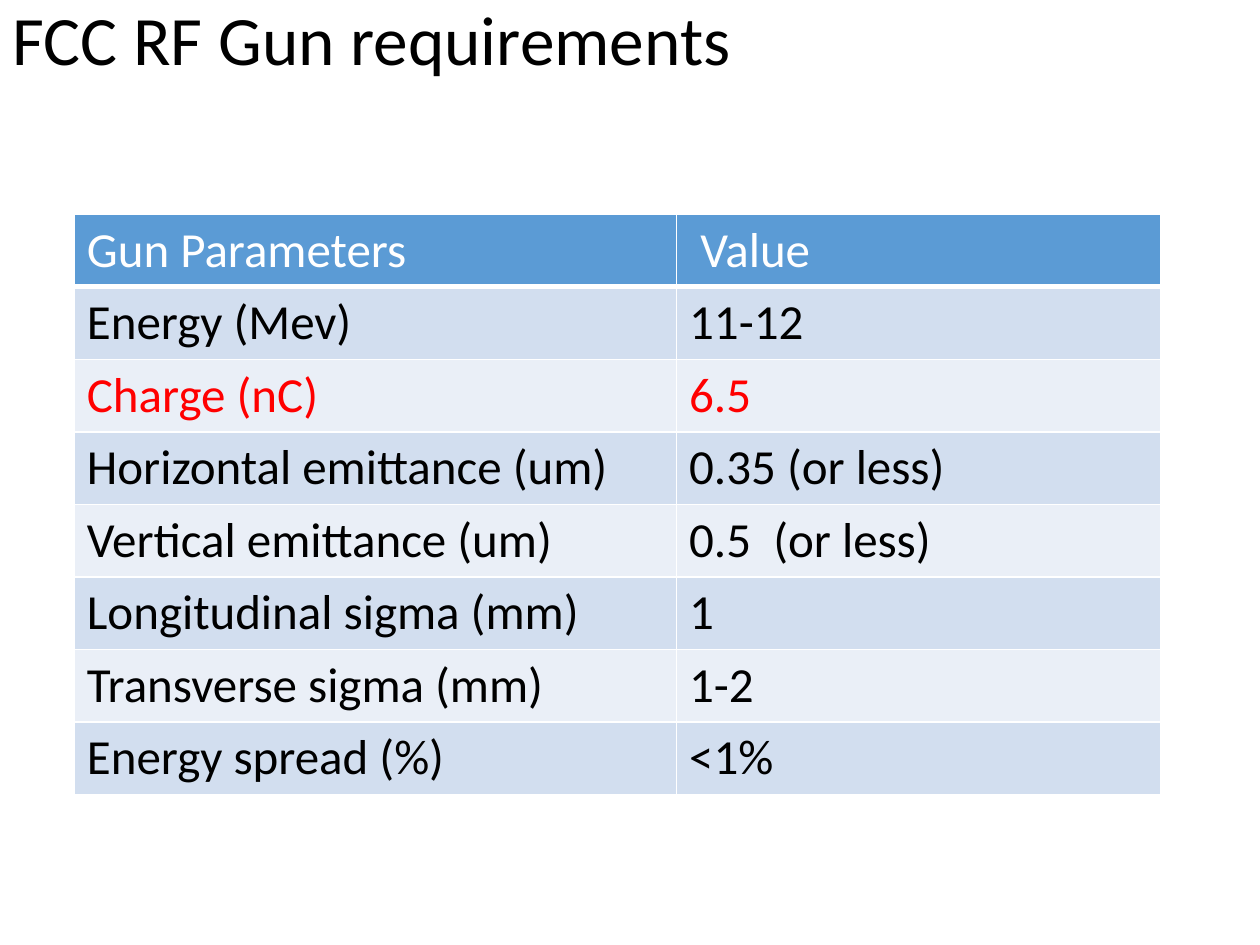
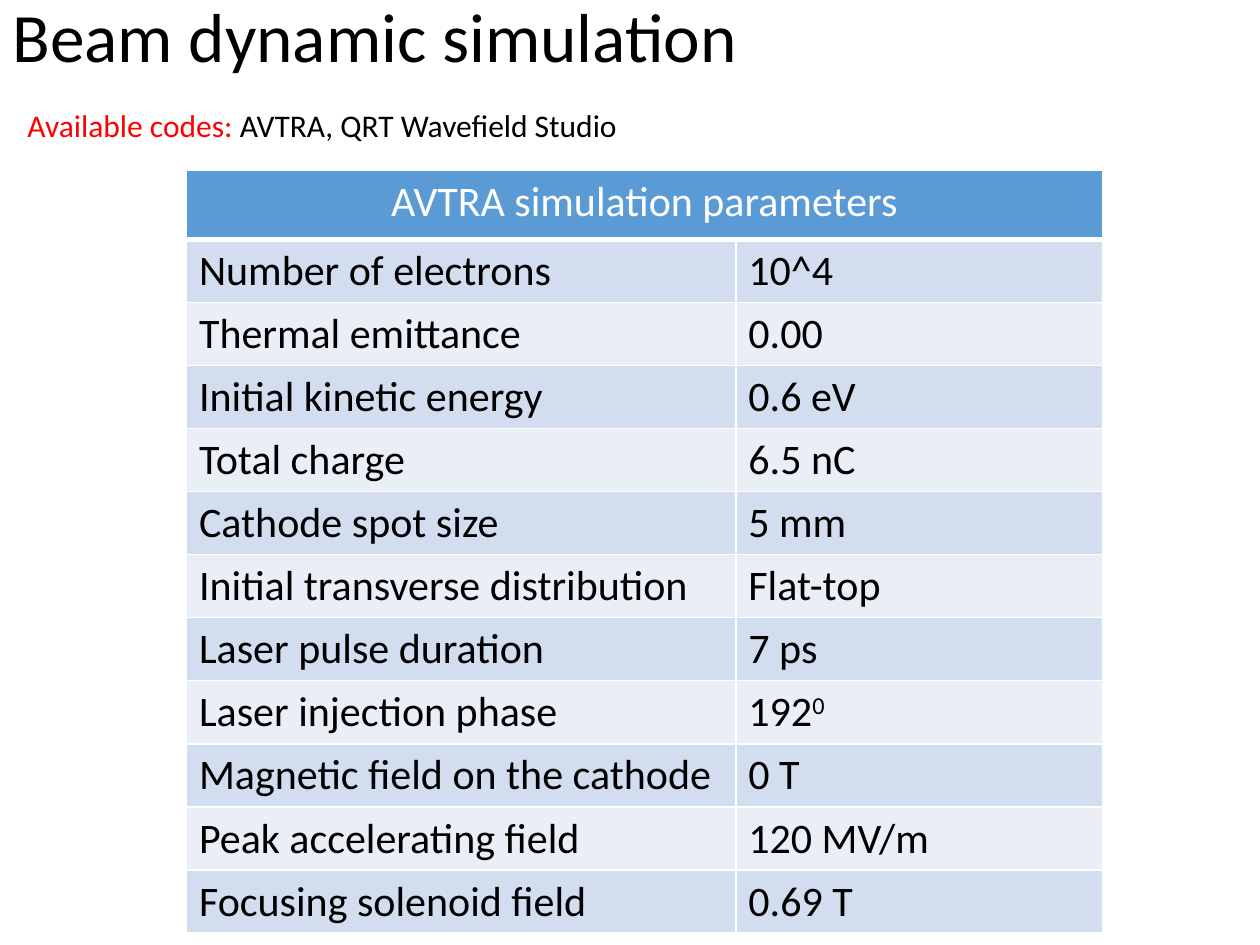
from lxml.etree import SubElement as Sub
from pptx import Presentation
from pptx.dml.color import RGBColor
from pptx.enum.text import MSO_ANCHOR as Anchor, MSO_AUTO_SIZE as Fit, PP_ALIGN as Align
from pptx.oxml.ns import qn
from pptx.util import Inches, Pt

FONT = "Calibri"
BLACK, WHITE, RED = "000000", "FFFFFF", "FF0000"
HEAD, BANDS = "5B9BD5", ("D2DEEF", "EAEFF7")

GUN = [
    ("Gun Parameters", " Value"),
    ("Energy (Mev)", "11-12"),
    ("Charge (nC)", "6.5"),
    ("Horizontal emittance (um)", "0.35 (or less)"),
    ("Vertical emittance (um)", "0.5  (or less)"),
    ("Longitudinal sigma (mm)", "1"),
    ("Transverse sigma (mm)", "1-2"),
    ("Energy spread (%)", "<1%"),
]
BEAM = [
    ("AVTRA simulation parameters",),
    ("Number of electrons", "10^4"),
    ("Thermal emittance", "0.00"),
    ("Initial kinetic energy", "0.6 eV"),
    ("Total charge", "6.5 nC"),
    ("Cathode spot size", "5 mm"),
    ("Initial transverse distribution", "Flat-top"),
    ("Laser pulse duration", "7 ps"),
    ("Laser injection phase", "192^{0}"),
    ("Magnetic field on the cathode", "0 T"),
    ("Peak accelerating field", "120 MV/m"),
    ("Focusing solenoid field", "0.69 T"),
]


def paint(target, color):
    target.solid()
    target.fore_color.rgb = RGBColor.from_string(color)


def write(para, text, size, color, raised=False):
    run = para.add_run()
    run.text = text
    for name, value in {"name": FONT, "size": Pt(size), "bold": False}.items():
        setattr(run.font, name, value)
    paint(run.font.fill, color)
    if raised:
        run._r.get_or_add_rPr().set("baseline", "30000")


def edge(cell, foot):
    props = cell._tc.get_or_add_tcPr()
    for side, width in {"L": 1, "R": 1, "T": 1, "B": foot}.items():
        line = Sub(props, qn(f"a:ln{side}"), w=str(Pt(width)))
        Sub(Sub(line, qn("a:solidFill")), qn("a:srgbClr"), val=WHITE)


def add_title(slide, text, top):
    title = slide.shapes.title
    spot = {"left": 0, "top": top, "width": 8.62, "height": 0.59}
    for name, value in spot.items():
        setattr(title, name, Inches(value))
    frame = title.text_frame
    look = {"vertical_anchor": Anchor.MIDDLE, "auto_size": Fit.NONE, "word_wrap": True}
    for name, value in look.items():
        setattr(frame, name, value)
    para = frame.paragraphs[0]
    para.alignment, para.line_spacing = Align.LEFT, 0.9
    write(para, text, 39.6, BLACK)


def add_codes(slide, box):
    frame = slide.shapes.add_textbox(*map(Inches, box)).text_frame
    frame.word_wrap = True
    para = frame.paragraphs[0]
    write(para, "Available codes: ", 18, RED)
    write(para, "AVTRA, QRT Wavefield Studio", 18, BLACK)


def add_grid(slide, rows, spot, cols, heights, size, marked=()):
    first, rest = heights
    high = first + rest * (len(rows) - 1)
    box = map(Inches, (*spot, sum(cols), high))
    table = slide.shapes.add_table(len(rows), len(cols), *box).table
    table.horz_banding = False
    for col, width in zip(table.columns, cols):
        col.width = Inches(width)
    for at, texts in enumerate(rows):
        head = at == 0
        table.rows[at].height = Inches(first if head else rest)
        ink = WHITE if head else RED if at in marked else BLACK
        for cell in table.rows[at].cells:
            edge(cell, 3 if head else 1)
            paint(cell.fill, HEAD if head else BANDS[(at - 1) % 2])
        if len(texts) == 1:
            table.cell(at, 0).merge(table.cell(at, len(cols) - 1))
            table.cell(at, 0).text_frame.paragraphs[0].alignment = Align.CENTER
        for col, text in enumerate(texts):
            para = table.cell(at, col).text_frame.paragraphs[0]
            base, _, power = text.partition("^{")
            write(para, base, size, ink)
            if power:
                write(para, power.rstrip("}"), size, ink, True)


def gun_slide(slide):
    add_title(slide, "FCC RF Gun requirements", 0.05)
    add_grid(slide, GUN, (0.59, 1.7), (4.78, 3.84), (0.57, 0.57), 28, marked=(2,))


def beam_slide(slide):
    add_title(slide, "Beam dynamic simulation", 0.02)
    add_codes(slide, (0.12, 0.79, 5, 0.56))
    add_grid(slide, BEAM, (1.48, 1.35), (4.36, 2.91), (0.55, 0.5), 24)


def main():
    deck = Presentation()
    deck.slide_width, deck.slide_height = Inches(10), Inches(7.5)
    plain = deck.slide_layouts[5]
    for build in (gun_slide, beam_slide):
        build(deck.slides.add_slide(plain))
    deck.save("out.pptx")


if __name__ == "__main__":
    main()
